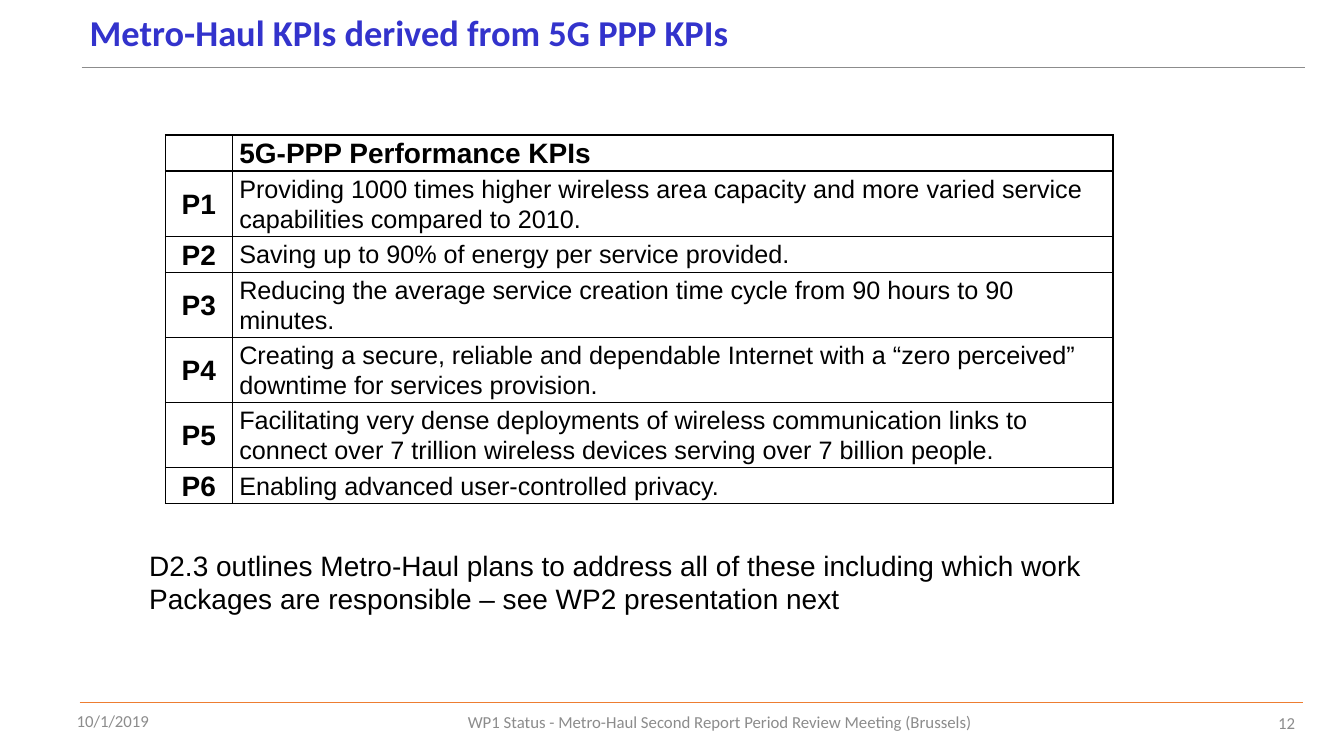
"""Build the slide listing the 5G PPP performance KPIs behind Metro-Haul."""
from lxml import etree
from pptx import Presentation
from pptx import util as u
from pptx.dml.color import RGBColor
from pptx.enum import shapes, text
from pptx.oxml import ns

LEFT, CENTER, RIGHT = text.PP_ALIGN.LEFT, text.PP_ALIGN.CENTER, text.PP_ALIGN.RIGHT
BLACK, WHITE, GRAY, BLUE, ORANGE = "000000", "FFFFFF", "8C8C8C", "3333CC", "ED7D31"


def color(value):
    return RGBColor.from_string(value)


def write(text_frame, content, size, font_name, font_color, bold=False, align=LEFT, spacing=1.0):
    text_frame.text = content
    paragraph = text_frame.paragraphs[0]
    paragraph.alignment = align
    paragraph.line_spacing = spacing
    font = paragraph.runs[0].font
    font.size, font.name, font.bold = u.Pt(size), font_name, bold
    font.color.rgb = color(font_color)


presentation = Presentation()
presentation.slide_width, presentation.slide_height = u.Cm(33.87), u.Cm(19.05)
slide = presentation.slides.add_slide(presentation.slide_layouts[6])

for left, right, top, line_color in [(2.06, 32.89, 1.7, GRAY), (2.01, 32.84, 17.7, ORANGE)]:
    rule = slide.shapes.add_connector(
        shapes.MSO_CONNECTOR.STRAIGHT, u.Cm(left), u.Cm(top), u.Cm(right), u.Cm(top))
    rule.line.color.rgb = color(line_color)
    rule.line.width = u.Pt(0.5)
    etree.SubElement(rule.element.spPr, ns.qn("a:effectLst"))

middle, upper = text.MSO_ANCHOR.MIDDLE, text.MSO_ANCHOR.TOP
text_boxes = [
    ((2.01, 0, 27.86, 1.73), middle, "Metro-Haul KPIs derived from 5G PPP KPIs",
     26, "Calibri", BLUE, True, LEFT, 0.9),
    ((1.68, 17.65, 2.84, 1.02), middle, "10/1/2019", 12, "Calibri", GRAY),
    ((31.72, 17.7, 1.17, 1.02), middle, "12", 12, "Calibri", GRAY, False, RIGHT),
    ((4.85, 17.68, 26.59, 1.02), middle,
     "WP1 Status - Metro-Haul Second Report Period Review Meeting (Brussels)",
     12, "Calibri", GRAY, False, CENTER),
    ((3.51, 13.69, 24.26, 1.96), upper,
     "D2.3 outlines Metro-Haul plans to address all of these including which work "
     "Packages are responsible – see WP2 presentation next", 20, "Arial", BLACK),
]
for box, anchor, *style in text_boxes:
    text_frame = slide.shapes.add_textbox(*map(u.Cm, box)).text_frame
    text_frame.word_wrap = True
    text_frame.vertical_anchor = anchor
    write(text_frame, *style)

kpis = [
    "Providing 1000 times higher wireless area capacity and more varied service "
    "capabilities compared to 2010.",
    "Saving up to 90% of energy per service provided.",
    "Reducing the average service creation time cycle from 90 hours to 90 minutes.",
    "Creating a secure, reliable and dependable Internet with a “zero perceived” "
    "downtime for services provision.",
    "Facilitating very dense deployments of wireless communication links to connect "
    "over 7 trillion wireless devices serving over 7 billion people.",
    "Enabling advanced user-controlled privacy.",
]
rows = [("", "5G-PPP Performance KPIs")]
rows += [(f"P{number}", kpi) for number, kpi in enumerate(kpis, 1)]
row_heights = [0.91, 1.64, 0.91, 1.64, 1.64, 1.64, 0.91]
column_widths = [1.68, 22.2]

table = slide.shapes.add_table(
    len(rows), 2, u.Cm(4.17), u.Cm(3.4), u.Cm(sum(column_widths)), u.Cm(sum(row_heights))).table
table.first_row = table.horz_banding = False
for column, width in zip(table.columns, column_widths):
    column.width = u.Cm(width)
for row_index, (row, height) in enumerate(zip(rows, row_heights)):
    table.rows[row_index].height = u.Cm(height)
    for column_index, content in enumerate(row):
        cell = table.cell(row_index, column_index)
        cell.margin_left = cell.margin_right = u.Cm(0.18)
        cell.margin_top = cell.margin_bottom = 0
        cell.vertical_anchor = middle
        properties = cell._tc.get_or_add_tcPr()
        for side in ("lnL", "lnR", "lnT", "lnB"):
            border = etree.SubElement(properties, ns.qn(f"a:{side}"), w=str(u.Pt(1)))
            border_fill = etree.SubElement(border, ns.qn("a:solidFill"))
            etree.SubElement(border_fill, ns.qn("a:srgbClr"), val=BLACK)
        cell.fill.solid()
        cell.fill.fore_color.rgb = color(WHITE)
        if content:
            heading = row_index == 0 or column_index == 0
            write(cell.text_frame, content, 20 if heading else 18, "Arial", BLACK,
                  heading, LEFT if column_index else CENTER, 1.07)

presentation.save("out.pptx")
